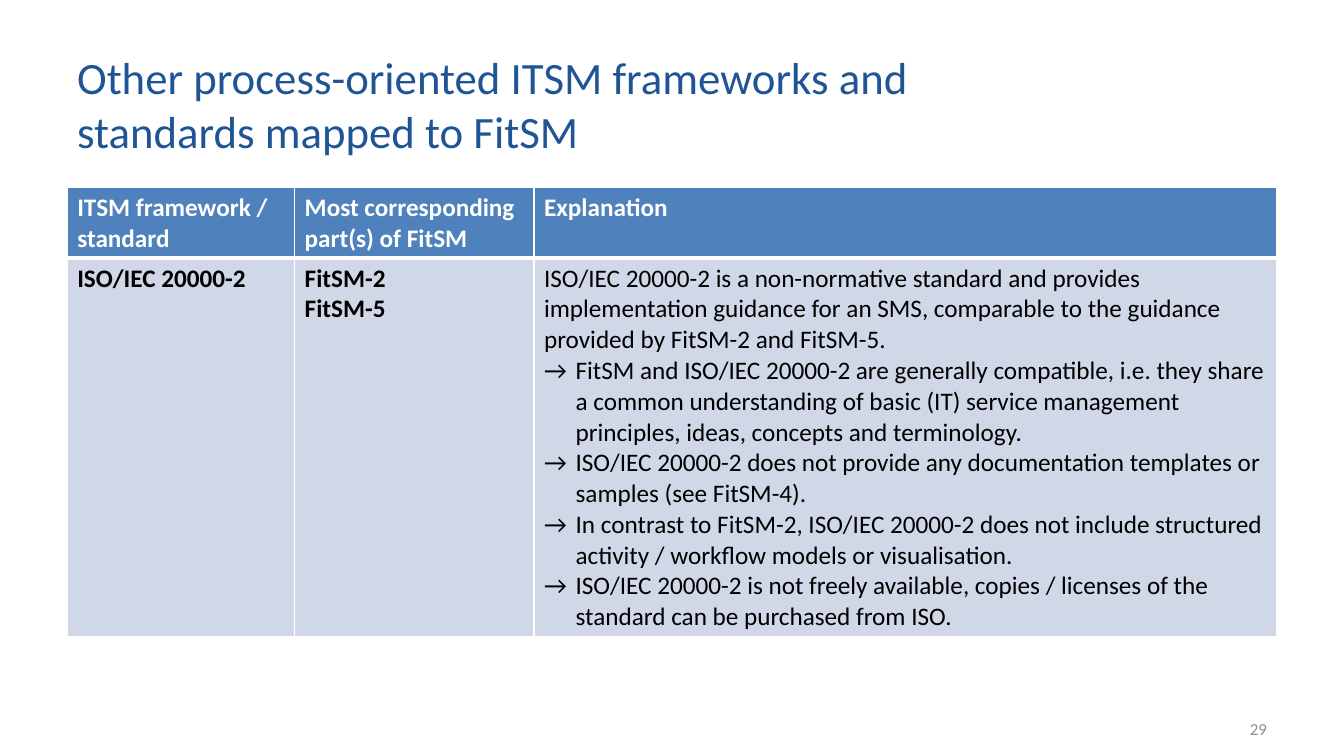
from lxml import etree
from pptx import Presentation
from pptx.dml.color import RGBColor
from pptx.enum.text import MSO_ANCHOR, PP_ALIGN
from pptx.oxml.ns import qn
from pptx.util import Pt

MIDDLE = MSO_ANCHOR.MIDDLE
LEFT, RIGHT = PP_ALIGN.LEFT, PP_ALIGN.RIGHT

FONT = "Calibri"
WHITE, BLACK = "FFFFFF", "000000"
TITLE_BLUE, HEADER_BLUE, BODY_BLUE, GREY = "205595", "4F81BD", "D0D8E8", "8C8C8C"

TITLE = "Other process-oriented ITSM frameworks and standards mapped to FitSM"
PAGE_NUMBER = "29"
ARROW = "→"
HEADER = [
    ["ITSM framework / standard"],
    ["Most corresponding part(s) of FitSM"],
    ["Explanation"],
]
EXPLANATION = [
    "ISO/IEC 20000-2 is a non-normative standard and provides implementation guidance "
    "for an SMS, comparable to the guidance provided by FitSM-2 and FitSM-5.",
    "FitSM and ISO/IEC 20000-2 are generally compatible, i.e. they share a common "
    "understanding of basic (IT) service management principles, ideas, concepts and terminology.",
    "ISO/IEC 20000-2 does not provide any documentation templates or samples (see FitSM-4).",
    "In contrast to FitSM-2, ISO/IEC 20000-2 does not include structured activity / "
    "workflow models or visualisation.",
    "ISO/IEC 20000-2 is not freely available, copies / licenses of the standard can be "
    "purchased from ISO.",
]
BODY = [["ISO/IEC 20000-2"], ["FitSM-2", "FitSM-5"], EXPLANATION]

MARGIN = 48
TABLE_TOP = 134
COLUMN_WIDTHS = [162.5, 171, 530.5]
ROW_HEIGHTS = [50.4, 270]
BULLET_INDENT = 22.5


def rgb(color):
    return RGBColor.from_string(color)


def format_runs(paragraph, size, color, bold=False):
    for run in paragraph.runs:
        run.font.name = FONT
        run.font.size = Pt(size)
        run.font.bold = bold
        run.font.color.rgb = rgb(color)


def add_text(slide, box, text, size, color, align=LEFT):
    frame = slide.shapes.add_textbox(*map(Pt, box)).text_frame
    frame.word_wrap = True
    frame.vertical_anchor = MIDDLE
    frame.text = text
    frame.paragraphs[0].alignment = align
    format_runs(frame.paragraphs[0], size, color)


def add_bullet(paragraph):
    properties = paragraph._p.get_or_add_pPr()
    properties.set("marL", str(Pt(BULLET_INDENT)))
    properties.set("indent", str(-Pt(BULLET_INDENT)))
    etree.SubElement(properties, qn("a:buFont"), typeface=FONT)
    etree.SubElement(properties, qn("a:buChar"), char=ARROW)


def set_borders(cell, widths):
    """Draw white borders; widths maps the side letters L, R, T, B to points."""
    properties = cell._tc.get_or_add_tcPr()
    for position, side in enumerate("LRTB"):
        line = etree.Element(qn(f"a:ln{side}"), w=str(Pt(widths[side])))
        fill = etree.SubElement(line, qn("a:solidFill"))
        etree.SubElement(fill, qn("a:srgbClr"), val=WHITE)
        properties.insert(position, line)


def fill_cell(cell, lines, background, color, bold, rule_above, rule_below):
    cell.fill.solid()
    cell.fill.fore_color.rgb = rgb(background)
    set_borders(cell, {"L": 1, "R": 1, "T": rule_above, "B": rule_below})
    cell.text_frame.text = "\n".join(lines)
    for index, paragraph in enumerate(cell.text_frame.paragraphs):
        if lines is EXPLANATION and index > 0:
            add_bullet(paragraph)
        format_runs(paragraph, 18, color, bold)


def add_mapping_table(slide):
    table = slide.shapes.add_table(
        2, len(COLUMN_WIDTHS), Pt(MARGIN), Pt(TABLE_TOP),
        Pt(sum(COLUMN_WIDTHS)), Pt(sum(ROW_HEIGHTS)),
    ).table
    for row, height in zip(table.rows, ROW_HEIGHTS):
        row.height = Pt(height)
    for index, width in enumerate(COLUMN_WIDTHS):
        table.columns[index].width = Pt(width)
        fill_cell(table.cell(0, index), HEADER[index], HEADER_BLUE, WHITE, True, 1, 3)
        is_key = BODY[index] is not EXPLANATION
        fill_cell(table.cell(1, index), BODY[index], BODY_BLUE, BLACK, is_key, 3, 1)


def main():
    presentation = Presentation()
    presentation.slide_width, presentation.slide_height = Pt(960), Pt(540)
    slide = presentation.slides.add_slide(presentation.slide_layouts[6])
    add_text(slide, (MARGIN, 21.6, 713.5, 104.4), TITLE, 32, TITLE_BLUE)
    add_mapping_table(slide)
    add_text(slide, (688, 506, 224, 28.8), PAGE_NUMBER, 12, GREY, RIGHT)
    presentation.save("out.pptx")


if __name__ == "__main__":
    main()
